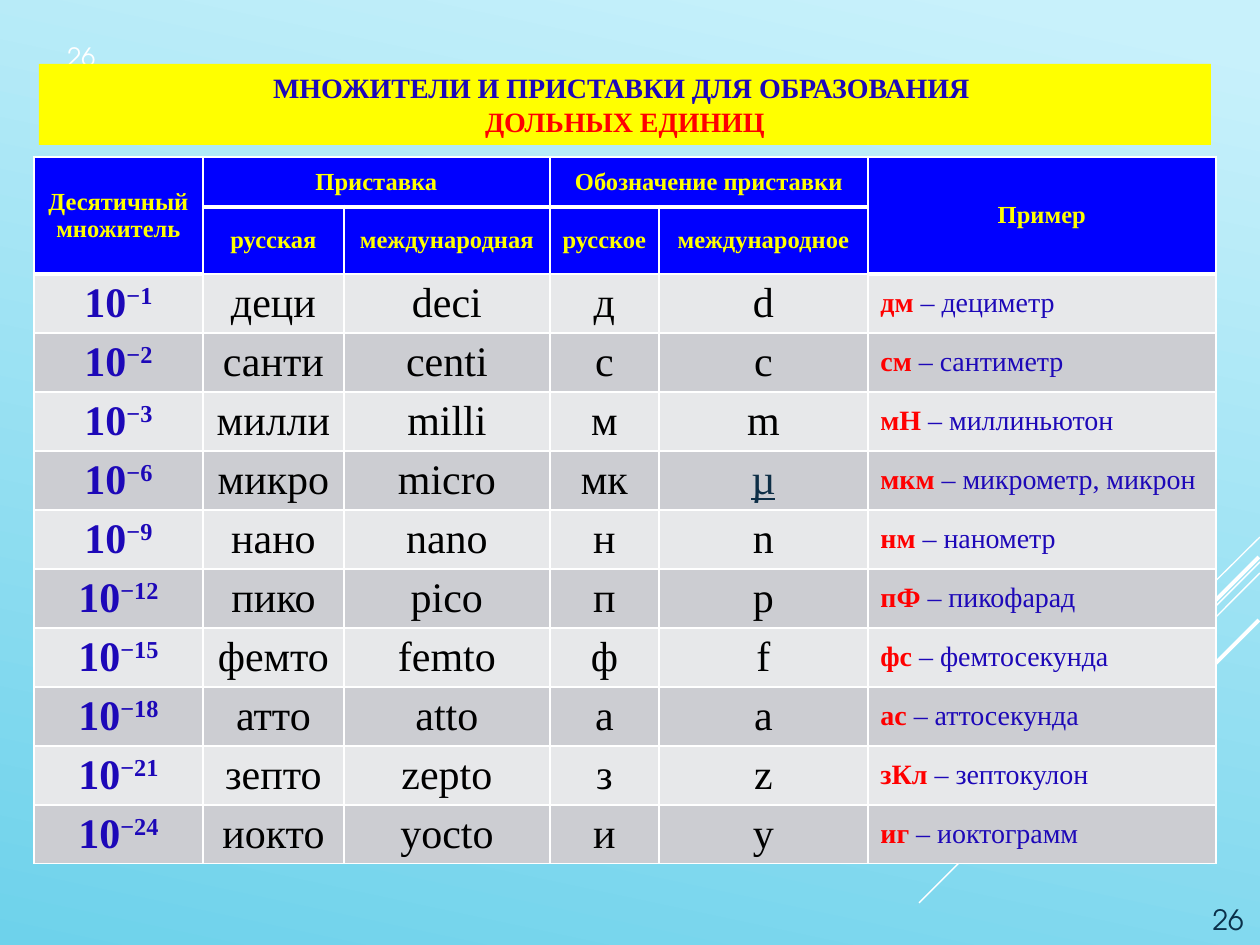
import pptx
import pptx.util
import pptx.dml.color
import pptx.enum.shapes
import pptx.enum.text
import pptx.oxml.ns
import lxml.etree

PX = 914400 // 126  # EMU in one px
SERIF = "Times New Roman"
SANS = "TeX Gyre Adventor"
ALIGN = pptx.enum.text.PP_ALIGN
ANCHOR = pptx.enum.text.MSO_ANCHOR

COLORS = {
    "sky": "C8F1FB", "sea": "6ED2EB", "white": "FFFFFF", "black": "000000",
    "yellow": "FFFF00", "blue": "0000FF", "ink": "1D08B8", "red": "FF0000",
    "light": "E7E8EA", "dark": "CCCDD2", "link": "0D2E46", "page": "0A304A",
}

# Background rays: x1, y1, x2, y2 in px, width in points
RAYS = [
    (1260, 537, 1155, 641, 0.75),
    (1260, 562, 919, 903, 0.75),
    (1260, 573, 1043, 790, 0.75),
    (1259, 557, 1061, 755, 2.25),
    (1259, 620, 1115, 764, 2.25),
]

COLS = [169, 141, 206, 109, 209, 348]
HEADS = [50, 67]
ROW = 59

# Header cells: row, column, last row, last column, text
HEADER = [
    (0, 0, 1, 0, "Десятичный множитель"),
    (0, 1, 0, 2, "Приставка"),
    (0, 3, 0, 4, "Обозначение приставки"),
    (0, 5, 1, 5, "Пример"),
    (1, 1, 1, 1, "русская"),
    (1, 2, 1, 2, "международная"),
    (1, 3, 1, 3, "русское"),
    (1, 4, 1, 4, "международное"),
]

# Power, Russian and international prefix, their symbols, example
UNITS = [
    ("−1", "деци", "deci", "д", "d", "дм ", "– дециметр"),
    ("−2", "санти", "centi", "с", "c", "см ", "– сантиметр"),
    ("−3", "милли", "milli", "м", "m", "мH ", "– миллиньютон"),
    ("−6", "микро", "micro", "мк", "µ", "мкм ", "– микрометр, микрон"),
    ("−9", "нано", "nano", "н", "n", "нм ", "– нанометр"),
    ("−12", "пико", "pico", "п", "p", "пФ ", "– пикофарад"),
    ("−15", "фемто", "femto", "ф", "f", "фс ", "– фемтосекунда"),
    ("−18", "атто", "atto", "а", "a", "ас ", "– аттосекунда"),
    ("−21", "зепто", "zepto", "з", "z", "зКл ", "– зептокулон"),
    ("−24", "иокто", "yocto", "и", "y", "иг ", "– иоктограмм"),
]


def rgb(name):
    return pptx.dml.color.RGBColor.from_string(COLORS[name])


def box(*sides):
    return [side * PX for side in sides]


def add_run(para, text, size, color, bold=False, face=SERIF):
    run = para.add_run()
    run.text = text
    run.font.size = pptx.util.Pt(size)
    run.font.name = face
    run.font.bold = bold
    run.font.color.rgb = rgb(color)
    return run


def paint_back(slide):
    fill = slide.background.fill
    fill.gradient()
    fill.gradient_angle = 258
    for stop, color, place in zip(fill.gradient_stops, ("sky", "sea"), (0.04, 1)):
        stop.color.rgb = rgb(color)
        stop.position = place


def add_ray(slide, x1, y1, x2, y2, width):
    kind = pptx.enum.shapes.MSO_CONNECTOR.STRAIGHT
    ray = slide.shapes.add_connector(kind, *box(x1, y1, x2, y2))
    ray.line.color.rgb = rgb("white")
    ray.line.width = pptx.util.Pt(width)
    props = ray._element.spPr
    lxml.etree.SubElement(props, pptx.oxml.ns.qn("a:effectLst"))


def add_number(slide, area, size, color, align, anchor):
    frame = slide.shapes.add_textbox(*box(*area)).text_frame
    frame.word_wrap = True
    frame.vertical_anchor = anchor
    para = frame.paragraphs[0]
    para.alignment = align
    add_run(para, "26", size, color, face=SANS)


def add_banner(slide):
    kind = pptx.enum.shapes.MSO_SHAPE.RECTANGLE
    shape = slide.shapes.add_shape(kind, *box(39, 64, 1172, 81))
    shape.shadow.inherit = False
    shape.fill.solid()
    shape.fill.fore_color.rgb = rgb("yellow")
    shape.line.fill.background()
    frame = shape.text_frame
    frame.word_wrap = True
    frame.vertical_anchor = ANCHOR.MIDDLE
    lines = [("МНОЖИТЕЛИ И ПРИСТАВКИ ДЛЯ ОБРАЗОВАНИЯ ", "ink"),
             ("ДОЛЬНЫХ ЕДИНИЦ", "red")]
    for i, (text, color) in enumerate(lines):
        para = frame.add_paragraph() if i else frame.paragraphs[0]
        para.alignment = ALIGN.CENTER
        add_run(para, text, 16, color, bold=True)


def style_cell(cell, fill, base=1):
    """Fill the cell and rule it in white; base is the lower line in points."""
    props = cell._tc.get_or_add_tcPr()
    for side, width in (("L", 1), ("R", 1), ("T", 1), ("B", base)):
        line = lxml.etree.SubElement(props, pptx.oxml.ns.qn("a:ln" + side))
        line.set("w", str(pptx.util.Pt(width)))
        solid = lxml.etree.SubElement(line, pptx.oxml.ns.qn("a:solidFill"))
        color = lxml.etree.SubElement(solid, pptx.oxml.ns.qn("a:srgbClr"))
        color.set("val", COLORS["white"])
    cell.fill.solid()
    cell.fill.fore_color.rgb = rgb(fill)
    cell.vertical_anchor = ANCHOR.MIDDLE
    cell.margin_top = cell.margin_bottom = 2 * PX


def fill_header(table):
    for row, col, last, end, text in HEADER:
        for r in range(row, last + 1):
            for c in range(col, end + 1):
                style_cell(table.cell(r, c), "blue", 3 if row == 0 else 1)
        cell = table.cell(row, col)
        if (row, col) != (last, end):
            cell.merge(table.cell(last, end))
        para = cell.text_frame.paragraphs[0]
        para.alignment = ALIGN.CENTER
        add_run(para, text, 14, "yellow", bold=True)


def fill_unit(table, row, unit):
    power, *names, sign, word = unit
    paras = []
    for col in range(len(COLS)):
        cell = table.cell(row, col)
        style_cell(cell, "dark" if row % 2 else "light")
        paras.append(cell.text_frame.paragraphs[0])
    for para in paras[:-1]:
        para.alignment = ALIGN.CENTER
    add_run(paras[0], "10", 24, "ink", bold=True)
    raised = add_run(paras[0], power, 24, "ink", bold=True)
    raised.font._element.set("baseline", "30000")
    for para, name in zip(paras[1:], names):
        micro = name == "µ"
        run = add_run(para, name, 24, "link" if micro else "black")
        run.font.underline = micro
    add_run(paras[-1], sign, 16, "red", bold=True)
    add_run(paras[-1], word, 16, "ink")


def add_units(slide):
    rows = HEADS + [ROW] * len(UNITS)
    area = box(34, 157, sum(COLS), sum(rows))
    table = slide.shapes.add_table(len(rows), len(COLS), *area).table
    for col, width in zip(table.columns, COLS):
        col.width = width * PX
    for row, height in zip(table.rows, rows):
        row.height = height * PX
    fill_header(table)
    for i, unit in enumerate(UNITS, len(HEADS)):
        fill_unit(table, i, unit)


def main():
    deck = pptx.Presentation()
    deck.slide_width, deck.slide_height = box(1260, 945)
    slide = deck.slides.add_slide(deck.slide_layouts[6])
    # Background
    paint_back(slide)
    for ray in RAYS:
        add_ray(slide, *ray)
    # Table, page numbers and heading
    add_units(slide)
    add_number(slide, (1138, 850, 118, 92), 16, "page", ALIGN.RIGHT, ANCHOR.BOTTOM)
    add_number(slide, (55, 35, 1134, 43), 14.4, "white", ALIGN.LEFT, ANCHOR.MIDDLE)
    add_banner(slide)
    deck.save("out.pptx")


if __name__ == "__main__":
    main()
